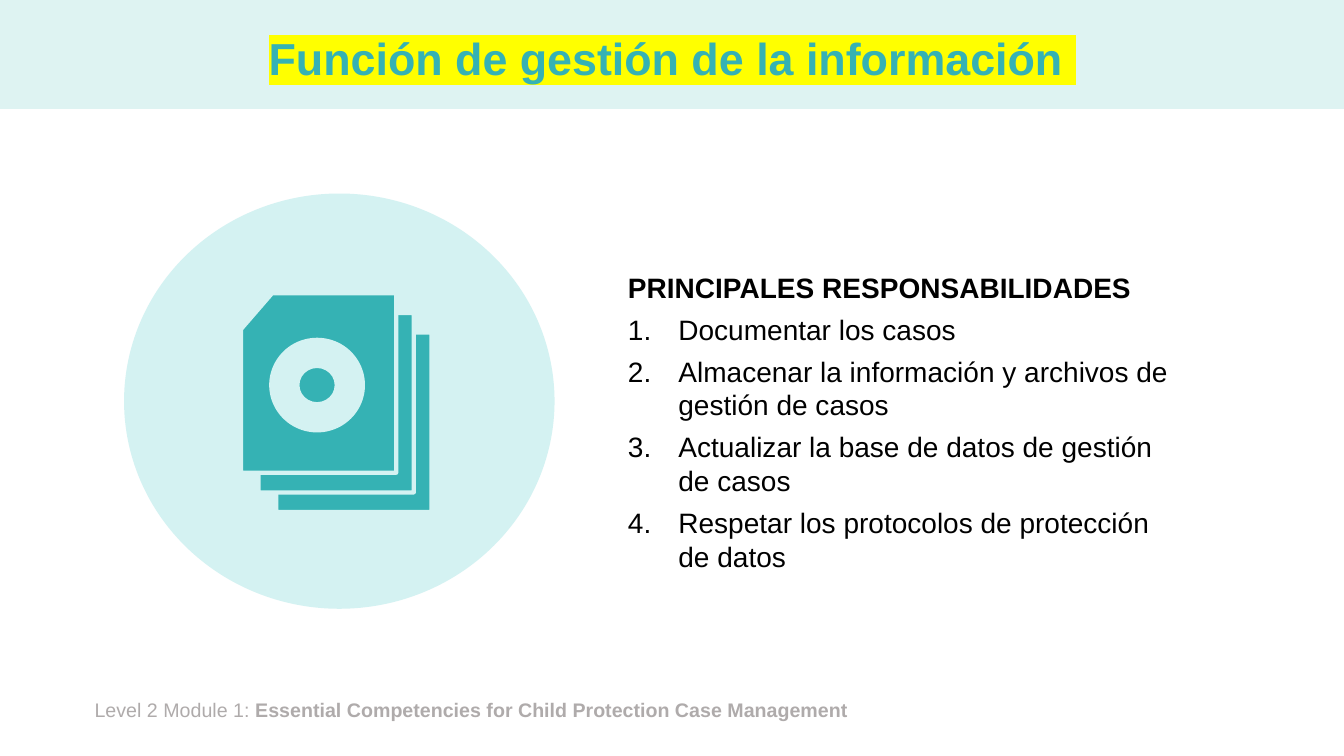
"""Build the slide on the information management function."""
from lxml import etree
from pptx import Presentation
from pptx.dml.color import RGBColor
from pptx.enum.shapes import MSO_SHAPE
from pptx.enum.text import MSO_ANCHOR, MSO_AUTO_SIZE, PP_ALIGN
from pptx.oxml.ns import qn
from pptx.util import Inches, Pt

RECT, OVAL = MSO_SHAPE.RECTANGLE, MSO_SHAPE.OVAL
CARD, DONUT = MSO_SHAPE.FLOWCHART_CARD, MSO_SHAPE.DONUT
MIDDLE, CENTER = MSO_ANCHOR.MIDDLE, PP_ALIGN.CENTER
GROW = MSO_AUTO_SIZE.SHAPE_TO_FIT_TEXT

WIDE, HIGH = Inches(13.33), Inches(7.5)
FONT = "Arial"
HUES = {
    "band": "DEF3F2",
    "pale": "D4F2F2",
    "teal": "35B2B4",
    "gray": "AFABAB",
    "ink": "000000",
    "mark": "FFFF00",
}
TASKS = [
    "Documentar los casos",
    "Almacenar la información y archivos de gestión de casos",
    "Actualizar la base de datos de gestión de casos",
    "Respetar los protocolos de protección de datos",
]


def hue(name):
    """Return a named colour."""
    return RGBColor.from_string(HUES[name])


def place(left, top, width, height):
    """Turn percentages of the slide into lengths."""
    return (int(WIDE * left / 100), int(HIGH * top / 100),
            int(WIDE * width / 100), int(HIGH * height / 100))


def add_form(slide, kind, box, fill, edge=None):
    """Add a filled preset shape, with an edge if one is named."""
    form = slide.shapes.add_shape(kind, *place(*box))
    form.shadow.inherit = False
    form.fill.solid()
    form.fill.fore_color.rgb = hue(fill)
    if edge:
        form.line.color.rgb = hue(edge)
        form.line.width = Pt(3)
    else:
        form.line.fill.background()
    return form


def add_box(slide, box):
    """Add a wrapping text box and return its frame."""
    frame = slide.shapes.add_textbox(*place(*box)).text_frame
    frame.word_wrap = True
    return frame


def style(run, size, color, bold=False):
    """Set the font of a run."""
    run.font.name = FONT
    run.font.size = Pt(size)
    run.font.bold = bold
    run.font.color.rgb = hue(color)


def mark(run, color):
    """Highlight a run."""
    light = etree.Element(qn("a:highlight"))
    etree.SubElement(light, qn("a:srgbClr"), val=HUES[color])
    run.font.fill._xPr.find(qn("a:solidFill")).addnext(light)


def number(para):
    """Give a paragraph a number and a hanging indent."""
    props = para._p.get_or_add_pPr()
    props.set("marL", str(Inches(0.5)))
    props.set("indent", str(-Inches(0.5)))
    etree.SubElement(props, qn("a:buFont"), typeface="+mj-lt")
    etree.SubElement(props, qn("a:buAutoNum"), type="arabicPeriod")


def add_title(slide):
    """Add the highlighted heading."""
    frame = add_box(slide, (6.9, 1.73, 86.27, 12.67))
    frame.vertical_anchor = MIDDLE
    frame.text = "Función de gestión de la información "
    para = frame.paragraphs[0]
    para.alignment = CENTER
    para.line_spacing = 0.9
    style(para.runs[0], 32, "teal", True)
    mark(para.runs[0], "mark")


def add_tasks(slide):
    """Add the numbered list of duties."""
    frame = add_box(slide, (45.99, 35.07, 42.39, 41.73))
    frame.auto_size = GROW
    frame.text = "\n".join(["PRINCIPALES RESPONSABILIDADES"] + TASKS)
    for rank, para in enumerate(frame.paragraphs):
        para.space_after = Pt(6)
        style(para.runs[0], 20, "ink", rank == 0)
        if rank:
            number(para)


def add_foot(slide):
    """Add the module line at the bottom."""
    frame = add_box(slide, (6.3, 91.6, 79.22, 4.53))
    frame.auto_size = GROW
    para = frame.paragraphs[0]
    parts = [("Level 2 Module 1: ", False),
             ("Essential Competencies for Child Protection Case Management", True)]
    for text, bold in parts:
        run = para.add_run()
        run.text = text
        style(run, 14, "gray", bold)


def add_icon(slide):
    """Add the stack of cards on its disc."""
    add_form(slide, OVAL, (9.23, 25.6, 32.03, 54.93), "pale")
    for step in (2, 1, 0):
        box = (17.93 + 1.31 * step, 38.8 + 2.6 * step, 11.55, 23.73)
        add_form(slide, CARD, box, "teal", "pale")
    ring = add_form(slide, DONUT, (20.03, 44.67, 7.13, 12.53), "pale")
    ring.adjustments[0] = 0.32


def main():
    """Build and save the slide."""
    deck = Presentation()
    deck.slide_width, deck.slide_height = WIDE, HIGH
    slide = deck.slides.add_slide(deck.slide_layouts[6])
    add_form(slide, RECT, (0, 0, 100, 14.4), "band")
    add_foot(slide)
    add_title(slide)
    add_tasks(slide)
    add_icon(slide)
    deck.save("out.pptx")


if __name__ == "__main__":
    main()
